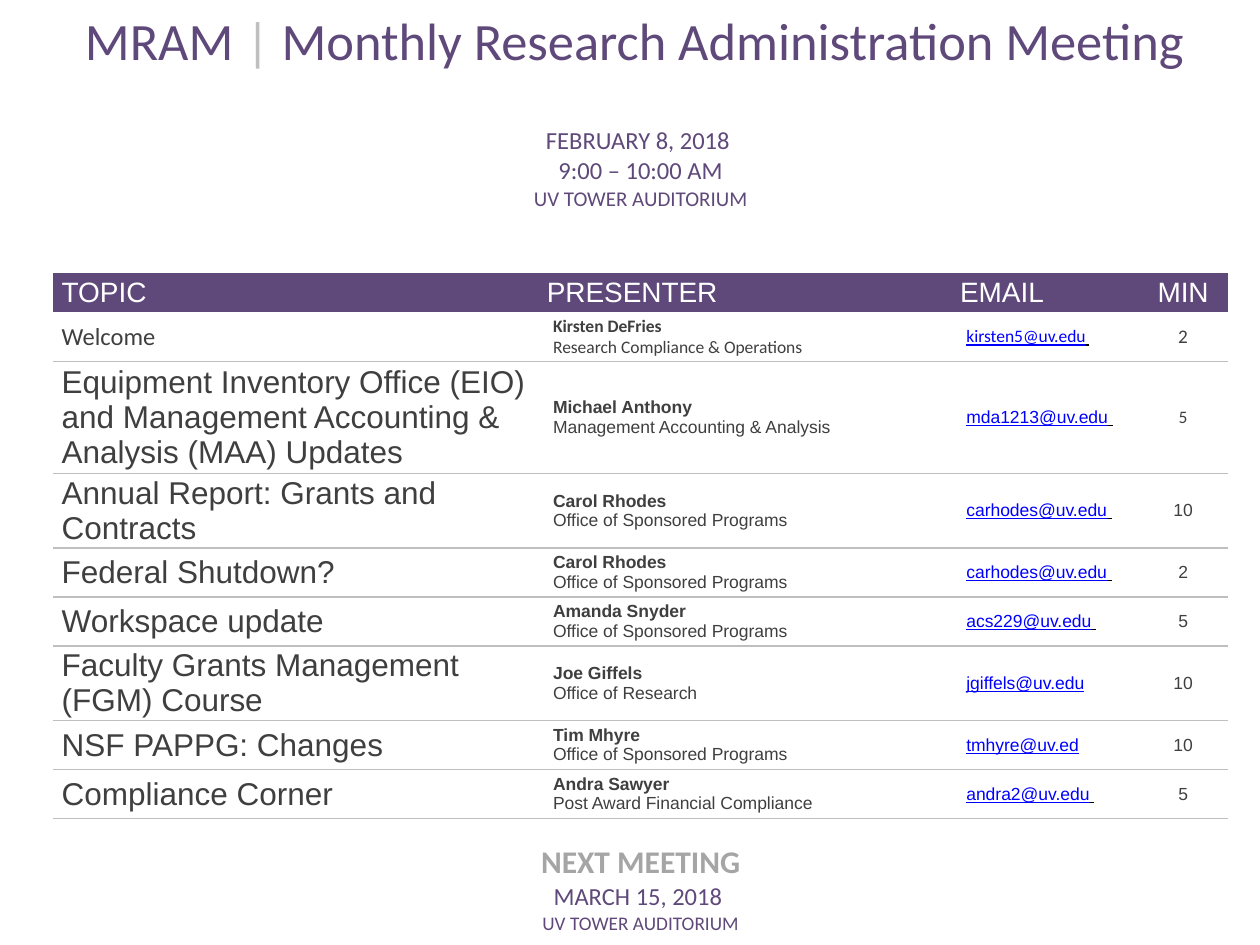
from lxml import etree
from pptx import Presentation
from pptx.dml.color import RGBColor
from pptx.enum import text
from pptx.oxml import ns
from pptx.util import Inches, Pt

HUES = {
    "plum": "5F497A",
    "rule": "BFBFBF",
    "grey": "A5A5A5",
    "ink": "3F3F3F",
    "link": "0000FF",
    "black": "000000",
    "white": "FFFFFF",
}
WIDTHS = [3.85, 3.28, 1.48, 0.72]
HEADS = ["TOPIC", "PRESENTER", "EMAIL", "MIN"]
TALKS = [
    ("Welcome", "Kirsten DeFries", "Research Compliance & Operations",
     "kirsten5@uv.edu ", "2", 0.39),
    ("Equipment Inventory Office (EIO) and Management Accounting & Analysis (MAA) Updates",
     "Michael Anthony", "Management Accounting & Analysis",
     "mda1213@uv.edu ", "5", 0.89),
    ("Annual Report: Grants and Contracts", "Carol Rhodes",
     "Office of Sponsored Programs", "carhodes@uv.edu ", "10", 0.59),
    ("Federal Shutdown?", "Carol Rhodes", "Office of Sponsored Programs",
     "carhodes@uv.edu ", "2", 0.39),
    ("Workspace update", "Amanda Snyder", "Office of Sponsored Programs",
     "acs229@uv.edu ", "5", 0.39),
    ("Faculty Grants Management (FGM) Course", "Joe Giffels",
     "Office of Research", "jgiffels@uv.edu", "10", 0.59),
    ("NSF PAPPG: Changes", "Tim Mhyre", "Office of Sponsored Programs",
     "tmhyre@uv.ed", "10", 0.39),
    ("Compliance Corner", "Andra Sawyer", "Post Award Financial Compliance",
     "andra2@uv.edu ", "5", 0.39),
]
HEIGHTS = [0.51, 1.58, 0.31] + [talk[-1] for talk in TALKS] + [0.93]
LAST = len(HEIGHTS) - 1


class Deck:
    def __init__(self):
        self.show = Presentation()
        self.show.slide_width = Inches(10)
        self.show.slide_height = Inches(7.5)
        self.slide = self.show.slides.add_slide(self.show.slide_layouts[6])

    def table(self, left, top):
        frame = self.slide.shapes.add_table(
            len(HEIGHTS), len(WIDTHS), Inches(left), Inches(top),
            Inches(sum(WIDTHS)), Inches(sum(HEIGHTS)))
        self.grid = frame.table
        self.grid.first_row = self.grid.horz_banding = False
        for col, width in zip(self.grid.columns, WIDTHS):
            col.width = Inches(width)
        for row, height in zip(self.grid.rows, HEIGHTS):
            row.height = Inches(height)
        for row in range(len(HEIGHTS)):
            for col in range(len(WIDTHS)):
                self.edge(row, col)

    def edge(self, row, col):
        cell = self.grid.cell(row, col)
        props = cell._tc.get_or_add_tcPr()
        ruled = {"lnT": row > 3, "lnB": 3 <= row < LAST}
        for side in ("lnL", "lnR", "lnT", "lnB"):
            line = etree.SubElement(props, ns.qn("a:" + side), w=str(Pt(1)))
            if ruled.get(side):
                fill = etree.SubElement(line, ns.qn("a:solidFill"))
                etree.SubElement(fill, ns.qn("a:srgbClr"), val=HUES["rule"])
            else:
                etree.SubElement(line, ns.qn("a:noFill"))
        cell.fill.solid()
        hue = "plum" if row == 2 else "white"
        cell.fill.fore_color.rgb = RGBColor.from_string(HUES[hue])

    def band(self, row):
        self.grid.cell(row, 0).merge(self.grid.cell(row, len(WIDTHS) - 1))

    def cell(self, row, col, lines, mid=False, pad=(0.07, 0, 0.07, 0), low=False):
        cell = self.grid.cell(row, col)
        sides = ("left", "top", "right", "bottom")
        form = {"margin_" + side: Inches(gap) for side, gap in zip(sides, pad)}
        form["vertical_anchor"] = text.MSO_ANCHOR.BOTTOM if low else text.MSO_ANCHOR.MIDDLE
        for name, value in form.items():
            setattr(cell, name, value)
        for index, runs in enumerate(lines):
            frame = cell.text_frame
            para = frame.add_paragraph() if index else frame.paragraphs[0]
            para.alignment = text.PP_ALIGN.CENTER if mid else text.PP_ALIGN.LEFT
            for words, size, face, hue, *more in runs:
                self.run(para, words, size, face, hue, more)

    def run(self, para, words, size, face, hue, more):
        run = para.add_run()
        run.text = words
        form = {"size": Pt(size), "name": face,
                "bold": "bold" in more, "underline": "under" in more}
        for name, value in form.items():
            setattr(run.font, name, value)
        run.font.color.rgb = RGBColor.from_string(HUES[hue])


def main():
    deck = Deck()
    deck.table(0.42, 0.08)
    for row in (0, 1, LAST):
        deck.band(row)
    deck.cell(0, 0, [[
        ("MRAM ", 30, "Calibri", "plum"),
        ("|", 30, "Calibri", "rule"),
        (" Monthly Research Administration Meeting ", 30, "Calibri", "plum"),
    ]], mid=True, low=True)
    deck.cell(1, 0, [
        [("FEBRUARY 8, 2018 ", 14, "Calibri", "plum")],
        [("9:00 – 10:00 AM", 14, "Calibri", "plum")],
        [("UV TOWER AUDITORIUM", 12, "Calibri", "plum")],
    ], mid=True, pad=(0.07, 0, 0.07, 0.49), low=True)
    for col, head in enumerate(HEADS):
        deck.cell(2, col, [[(head, 16, "Arial", "white")]], mid=col == 3)

    for row, (topic, name, unit, mail, mins, _) in enumerate(TALKS, 3):
        first = row == 3
        face = "Calibri" if first else "Arial"
        deck.cell(row, 0, [[(topic, 14 if first else 18, face, "ink")]])
        deck.cell(row, 1, [
            [(name, 10, face, "ink", "bold")],
            [(unit, 10, face, "ink")],
        ], pad=(0.12, 0, 0.12, 0))
        runs = [(mail.strip(), 10, face, "link", "under")]
        if mail.endswith(" "):
            runs.append((" ", 10, face, "black", "under"))
        deck.cell(row, 2, [runs], pad=(0.12, 0, 0.12, 0))
        deck.cell(row, 3, [[(mins, 11 if first else 10,
                             "Calibri" if row < 5 else face, "ink")]], mid=True)

    deck.cell(LAST, 0, [
        [("NEXT MEETING", 18, "Calibri", "grey", "bold")],
        [("MARCH 15, 2018 ", 14, "Calibri", "plum")],
        [("UV TOWER AUDITORIUM", 11, "Calibri", "plum")],
    ], mid=True, pad=(0.07, 0.2, 0.07, 0))
    deck.show.save("out.pptx")


if __name__ == "__main__":
    main()
